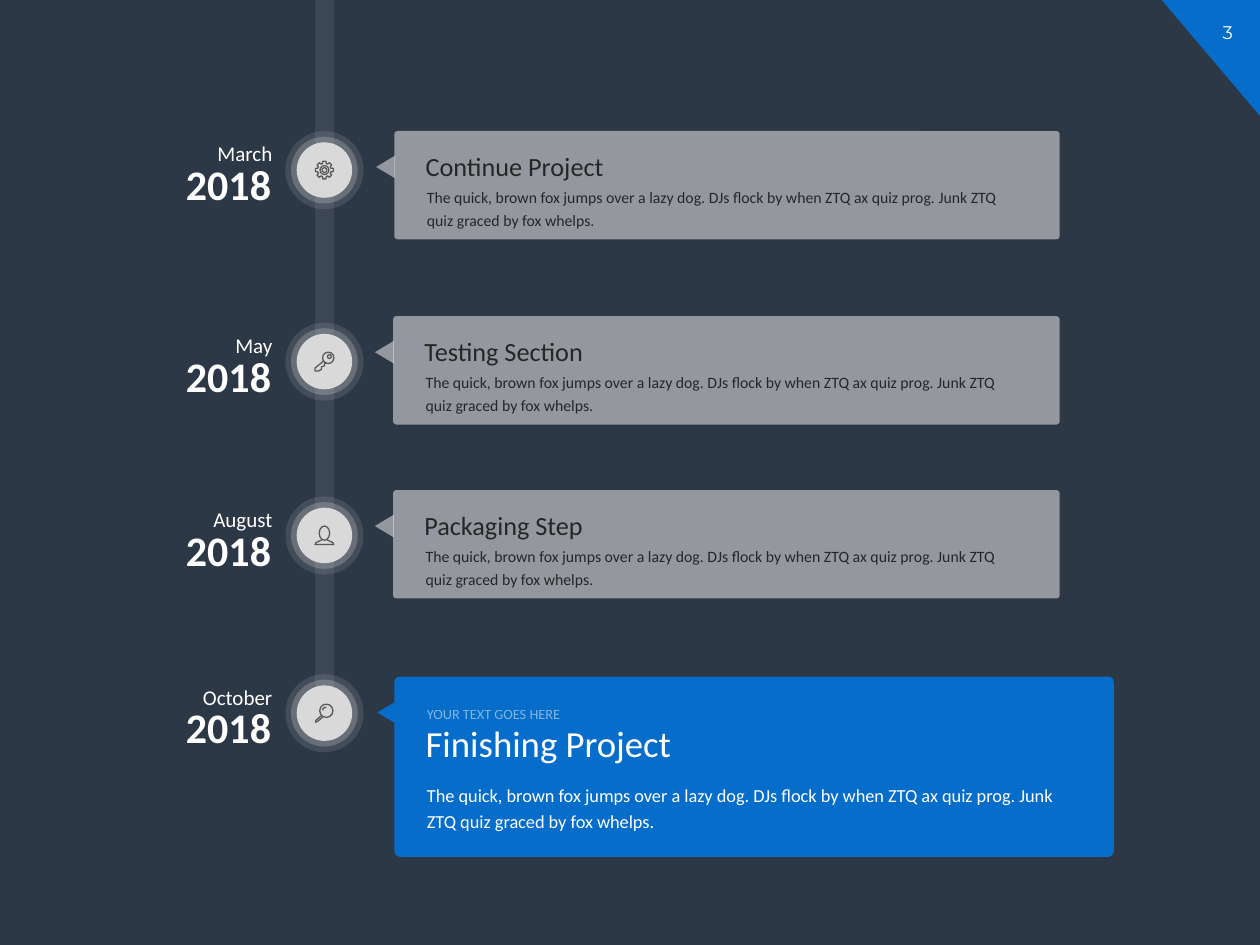
"""Build a dark vertical project timeline slide with four milestones."""
from math import cos, pi, sin

from lxml.etree import SubElement
from pptx import Presentation
from pptx.dml.color import RGBColor
from pptx.enum.shapes import MSO_SHAPE as SHAPE
from pptx.enum.text import MSO_AUTO_SIZE as AUTO, PP_ALIGN as ALIGN
from pptx.oxml.ns import qn
from pptx.util import Inches, Pt

NAVY = RGBColor(0x2D, 0x38, 0x47)
BLUE = RGBColor(0x06, 0x6D, 0xCA)
WHITE = RGBColor(0xFF, 0xFF, 0xFF)
SILVER = RGBColor(0xD9, 0xD9, 0xD9)
INK = RGBColor(0x26, 0x26, 0x26)
GREY = RGBColor(0x59, 0x59, 0x59)

BODY = ("The quick, brown fox jumps over a lazy dog. DJs flock by when ZTQ ax quiz prog. "
        "Junk ZTQ quiz graced by fox whelps.")

prs = Presentation()
prs.slide_width, prs.slide_height = Inches(10), Inches(7.5)
COL, ROW = prs.slide_width // 1000, prs.slide_height // 750
s = prs.slides.add_slide(prs.slide_layouts[6])
s.background.fill.solid()
s.background.fill.fore_color.rgb = NAVY


def shape(kind, x, y, w, h, fill=None, alpha=None, line=None, rotation=0, corner=None):
    sp = s.shapes.add_shape(kind, round(x * COL), round(y * ROW), round(w * COL), round(h * ROW))
    sp.shadow.inherit = False
    sp.rotation = rotation
    if corner is not None:
        sp.adjustments[0] = corner
    if fill is None:
        sp.fill.background()
    else:
        sp.fill.solid()
        sp.fill.fore_color.rgb = fill
    if alpha:
        for clr in sp._element.iter(qn("a:srgbClr")):
            SubElement(clr, qn("a:alpha"), val=str(alpha * 1000))
    if line is None:
        sp.line.fill.background()
    else:
        sp.line.color.rgb = line
        sp.line.width = Pt(0.75)


def text(words, x, y, w, h, size, color=WHITE, font="Calibri", bold=False,
         align=ALIGN.LEFT, spacing=None, alpha=None):
    tf = s.shapes.add_textbox(x * COL, y * ROW, w * COL, h * ROW).text_frame
    tf.word_wrap = True
    tf.auto_size = AUTO.SHAPE_TO_FIT_TEXT
    p = tf.paragraphs[0]
    p.alignment = align
    p.line_spacing = spacing
    r = p.add_run()
    r.text = words
    r.font.size, r.font.name, r.font.bold = Pt(size), font, bold
    r.font.color.rgb = color
    if alpha:
        for clr in r._r.iter(qn("a:srgbClr")):
            SubElement(clr, qn("a:alpha"), val=str(alpha * 1000))


shape(SHAPE.RIGHT_TRIANGLE, 922, 0, 78, 92, BLUE, rotation=180)
text("3", 949, 12, 51, 28, 10.5, font="Montserrat", align=ALIGN.CENTER)
shape(SHAPE.RECTANGLE, 250, 0, 15, 570, SILVER, alpha=9)

cards = [("Continue Project", 313, 104, 528),
         ("Testing Section", 312, 251, 529),
         ("Packaging Step", 312, 389, 529)]
for title, x, y, w in cards:
    shape(SHAPE.ROUNDED_RECTANGLE, x, y, w, 86, SILVER, alpha=60, corner=0.03)
    shape(SHAPE.ISOSCELES_TRIANGLE, x - 16, y + 21, 18, 15, SILVER, alpha=60, rotation=270)
    text(BODY, x + 16, y + 37, 487, 46, 9, INK, spacing=1.2)
    text(title, x + 15, y + 10, 526, 35, 15, INK)

shape(SHAPE.ROUNDED_RECTANGLE, 313, 537, 571, 143, BLUE, corner=0.03)
shape(SHAPE.ISOSCELES_TRIANGLE, 298, 558, 18, 15, BLUE, rotation=270)
text(BODY, 329, 614, 540, 53, 10.5, spacing=1.2)
text("Finishing Project", 328, 567, 526, 45, 21)
text("YOUR TEXT GOES HERE", 329, 552, 540, 27, 8.2, spacing=1.2, alpha=50)

teeth = [(r * cos(a), r * sin(a)) for k in range(8)
         for r, turn in ((0.72, -0.28), (0.95, -0.18), (0.95, 0.18), (0.72, 0.28))
         for a in [k * pi / 4 + turn]]
gear = [(0, 0, 0.47, 0.47), (0, 0, 0.25, 0.25)], [teeth + teeth[:1]]
key = ([(0.4, -0.4, 0.6, 0.6), (0.53, -0.53, 0.2, 0.2)],
       [[(-0.1, -0.05), (-1, 0.7), (-1, 1), (-0.6, 1), (-0.3, 0.8), (-0.3, 0.55),
         (0, 0.45), (0, 0.2), (0.2, 0.15)]])
person = ([(0, -0.25, 0.55, 0.75)],
          [[(-0.25, 0.45), (-0.9, 0.75), (-1, 0.95), (1, 0.95), (0.9, 0.75), (0.25, 0.45)]])
lens = ([(0.2, -0.25, 0.7, 0.7)],
        [[(-0.3, 0.25), (-0.9, 0.75), (-0.95, 0.95), (-0.75, 0.9), (-0.15, 0.4)],
         [(-0.2, -0.3), (-0.1, -0.52), (0.2, -0.65)]])

milestones = [("March", 104, gear), ("May", 256, key),
              ("August", 394, person), ("October", 535, lens)]
CENTER, ICON = 257.5, 7.5
for month, top, (ovals, outlines) in milestones:
    text("2018", 95, top + 17, 130, 50, 24, bold=True, align=ALIGN.RIGHT)
    text(month, 107, top - 1, 119, 34, 12, align=ALIGN.RIGHT, spacing=1.2)
    middle = top + 31
    for size, alpha in ((62, 13), (53, 25), (44, None)):
        shape(SHAPE.OVAL, CENTER - size / 2, middle - size / 2, size, size, SILVER, alpha=alpha)
    for cx, cy, rx, ry in ovals:
        shape(SHAPE.OVAL, CENTER + (cx - rx) * ICON, middle + (cy - ry) * ICON,
              2 * rx * ICON, 2 * ry * ICON, line=GREY)
    for outline in outlines:
        points = [((CENTER + px * ICON) * COL, (middle + py * ICON) * ROW) for px, py in outline]
        builder = s.shapes.build_freeform(*points[0])
        builder.add_line_segments(points[1:], close=outline[0] == outline[-1])
        sp = builder.convert_to_shape()
        sp.shadow.inherit = False
        sp.fill.background()
        sp.line.color.rgb = GREY
        sp.line.width = Pt(0.75)

prs.save("out.pptx")
